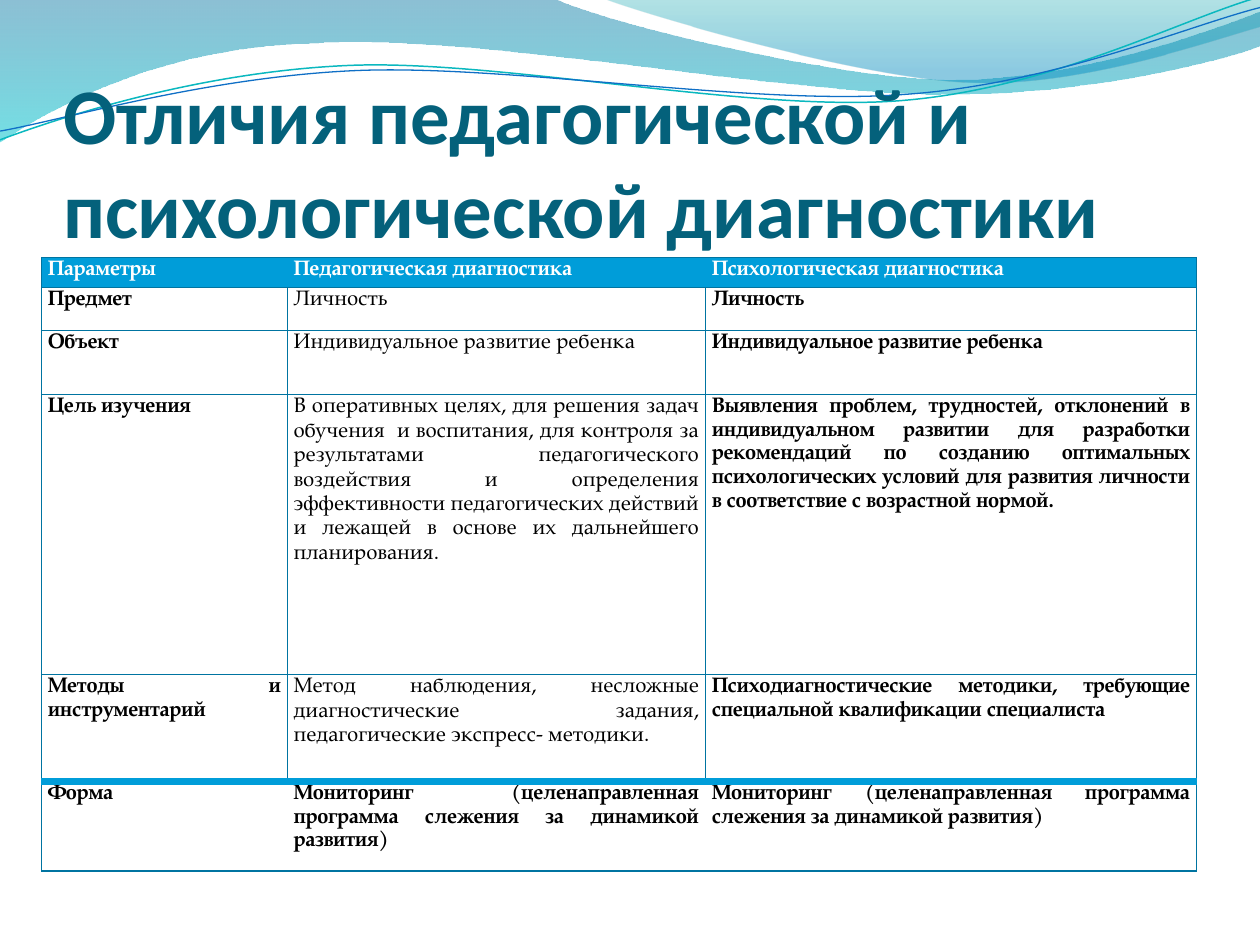
from math import cos, radians, sin
from lxml.etree import SubElement
from pptx import Presentation
from pptx.dml.color import RGBColor
from pptx.enum.text import MSO_ANCHOR, MSO_AUTO_SIZE, PP_ALIGN
from pptx.oxml.ns import qn
from pptx.util import Pt

# Content
TITLE = "Отличия педагогической и психологической диагностики"
FORM = "Мониторинг (целенаправленная программа слежения за динамикой развития)"
ROWS = [
    ("Параметры", "Педагогическая диагностика", "Психологическая диагностика"),
    ("Предмет", "Личность", "Личность"),
    ("Объект", "Индивидуальное развитие ребенка", "Индивидуальное развитие ребенка"),
    ("Цель изучения",
     "В оперативных целях, для решения задач обучения  и воспитания, для контроля "
     "за результатами педагогического воздействия и определения эффективности "
     "педагогических действий и лежащей в основе их дальнейшего планирования.",
     "Выявления проблем, трудностей, отклонений в индивидуальном развитии для "
     "разработки рекомендаций по созданию оптимальных психологических условий для "
     "развития личности в соответствие с возрастной нормой."),
    ("Методы и инструментарий",
     "Метод наблюдения, несложные диагностические задания, педагогические "
     "экспресс- методики.",
     "Психодиагностические методики, требующие специальной квалификации специалиста"),
    ("Форма", FORM, FORM),
]
WIDTHS = [140.4, 239, 280.8]
HEIGHTS = [17, 24.5, 36.7, 160, 61.2, 51.2]

THEME = {
    "title": ("Calibri", 45, "04617B"),
    "head": ("TeX Gyre Pagella", 12, "FFFFFF"),
    "body": ("TeX Gyre Pagella", 12, "000000"),
    "band": "009DD9", "rule": "0074A1",
    "thin": 0.75, "thick": 4,
}

# Waves: a start point, then lines (x, y) or curves (two controls and an end)
FILLS = [
    ([(0, 0), (316.8, -0.7),
      (342.7, 12.2, 478.1, 45.4, 545.8, 45.4),
      (614.2, 45.4, 689.8, 18.7, 720, 6.5), (720.7, 25.9),
      (707.8, 31.7, 626.4, 54.7, 537.1, 54),
      (447.8, 54, 275, 20.2, 185, 24.5),
      (92.9, 25.9, 33.1, 59.8, -0.7, 81.4), (0, 0)],
     [(0, "0074A1", 45), (1, "00C6CF", 55)]),
    ([(344.9, -0.7),
      (366.5, 7.9, 491, 44.6, 553.7, 46.8),
      (616.3, 49.7, 691.9, 23, 720, 15.1), (720, 0), (344.9, -0.7)],
     [(0, "00A1A9", 30), (0.8, "008BBF", 45)]),
]
LINES = [
    ([(0, 79.9), (34.6, 67, 113.8, 41, 199.4, 37.4),
      (284.4, 33.8, 427, 64.1, 513.4, 57.6),
      (599.8, 51.1, 675.4, 10.8, 718.6, -1.4)], "0AB8BF", 0.85),
    ([(0, 74.9), (33.8, 69.1, 118.1, 43.9, 203.8, 40.3),
      (290.2, 36.7, 429.8, 60.5, 516.2, 54),
      (601.9, 48.2, 677.5, 15.1, 720, 4.3)], "0F6FC6", 0.75),
]
TILT = -2.7
PIVOT = (359.3, 41.6)


def rgb(code):
    return RGBColor.from_string(code)


def turn(dot, angle):
    """Rotate a point about the pivot."""
    x, y = dot[0] - PIVOT[0], dot[1] - PIVOT[1]
    a = radians(angle)
    return (PIVOT[0] + x * cos(a) - y * sin(a),
            PIVOT[1] + x * sin(a) + y * cos(a))


def draw(slide, path, close, tilt=0):
    """Lay down all knots as lines, then join each triple into a curve."""
    dots = [turn(seg[i:i + 2], -tilt) for seg in path for i in range(0, len(seg), 2)]
    dots = [(Pt(x), Pt(y)) for x, y in dots]
    pen = slide.shapes.build_freeform(*dots[0])
    pen.add_line_segments(dots[1:], close=close)
    shape = pen.convert_to_shape()
    shape.rotation = tilt
    shape.shadow.inherit = False
    legs = iter(list(shape.element.spPr.iter(qn("a:lnTo"))))
    for seg in path[1:]:
        leg = next(legs)
        if len(seg) == 6:
            leg.tag = qn("a:cubicBezTo")
            for _ in range(2):
                extra = next(legs)
                leg.append(extra[0])
                extra.getparent().remove(extra)
    return shape


def add_fill(slide, path, stops):
    shape = draw(slide, path, True)
    shape.line.fill.background()
    shape.fill.gradient()
    shape.fill.gradient_angle = 270
    for stop, (place, code, _) in zip(shape.fill.gradient_stops, stops):
        stop.position = place
        stop.color.rgb = rgb(code)
    tints = shape.element.spPr.iter(qn("a:srgbClr"))
    for tint, (_, _, alpha) in zip(tints, stops):
        SubElement(tint, qn("a:alpha"), val=str(alpha * 1000))


def add_line(slide, path, code, width):
    shape = draw(slide, path, False, TILT)
    shape.fill.background()
    shape.line.color.rgb = rgb(code)
    shape.line.width = Pt(width)


def style(para, look, bold):
    face, size, code = THEME[look]
    for run in para.runs:
        font = run.font
        font.name, font.size, font.bold = face, Pt(size), bold
        font.color.rgb = rgb(code)


def set_edges(cell, edges):
    """Draw the named sides and blank the others."""
    props = cell._tc.get_or_add_tcPr()
    for spot, side in enumerate("LRTB"):
        code, width = edges.get(side, (None, 0))
        line = SubElement(props, qn("a:ln" + side), w=str(Pt(width)))
        props.insert(spot, line)
        if code:
            fill = SubElement(line, qn("a:solidFill"))
            SubElement(fill, qn("a:srgbClr"), val=code)
        else:
            SubElement(line, qn("a:noFill"))


def add_title(slide):
    title = slide.shapes.title
    title.left, title.top, title.width, title.height = map(Pt, (36, 55.4, 648, 90))
    frame = title.text_frame
    frame.text = TITLE
    frame.word_wrap = True
    frame.auto_size = MSO_AUTO_SIZE.NONE
    frame.vertical_anchor = MSO_ANCHOR.BOTTOM
    frame.margin_left = frame.margin_right = frame.margin_bottom = 0
    frame.margin_top = Pt(3.6)
    para = frame.paragraphs[0]
    para.alignment = PP_ALIGN.LEFT
    style(para, "title", True)
    slide.shapes._spTree.append(title.element)  # in front of the waves


def add_grid(slide):
    box = map(Pt, (23.75, 147.2, sum(WIDTHS), sum(HEIGHTS)))
    table = slide.shapes.add_table(len(ROWS), len(WIDTHS), *box).table
    for col, width in zip(table.columns, WIDTHS):
        col.width = Pt(width)
    for row, height in zip(table.rows, HEIGHTS):
        row.height = Pt(height)

    thin = (THEME["rule"], THEME["thin"])
    thick = (THEME["band"], THEME["thick"])
    last, end = len(ROWS) - 1, len(WIDTHS) - 1
    for r, row in enumerate(ROWS):
        inner = 0 < r < last
        for c, text in enumerate(row):
            cell = table.cell(r, c)
            cell.text = text
            cell.margin_left = cell.margin_right = Pt(3.6)
            cell.margin_top = cell.margin_bottom = 0
            para = cell.text_frame.paragraphs[0]
            para.alignment = PP_ALIGN.JUSTIFY
            para.line_spacing = 1.15
            style(para, "body" if r else "head", not (inner and c == 1))
            if r:
                cell.fill.background()
            else:
                cell.fill.solid()
                cell.fill.fore_color.rgb = rgb(THEME["band"])
            edges = {"T": thick if r == last else thin,
                     "B": thick if r == last - 1 else thin}
            if inner or c == 0:
                edges["L"] = thin
            if inner or c == end:
                edges["R"] = thin
            set_edges(cell, edges)


def main():
    deck = Presentation()
    deck.slide_width, deck.slide_height = Pt(720), Pt(540)
    slide = deck.slides.add_slide(deck.slide_layouts[5])
    for path, stops in FILLS:
        add_fill(slide, path, stops)
    for path, code, width in LINES:
        add_line(slide, path, code, width)
    add_title(slide)
    add_grid(slide)
    deck.save("out.pptx")


if __name__ == "__main__":
    main()
